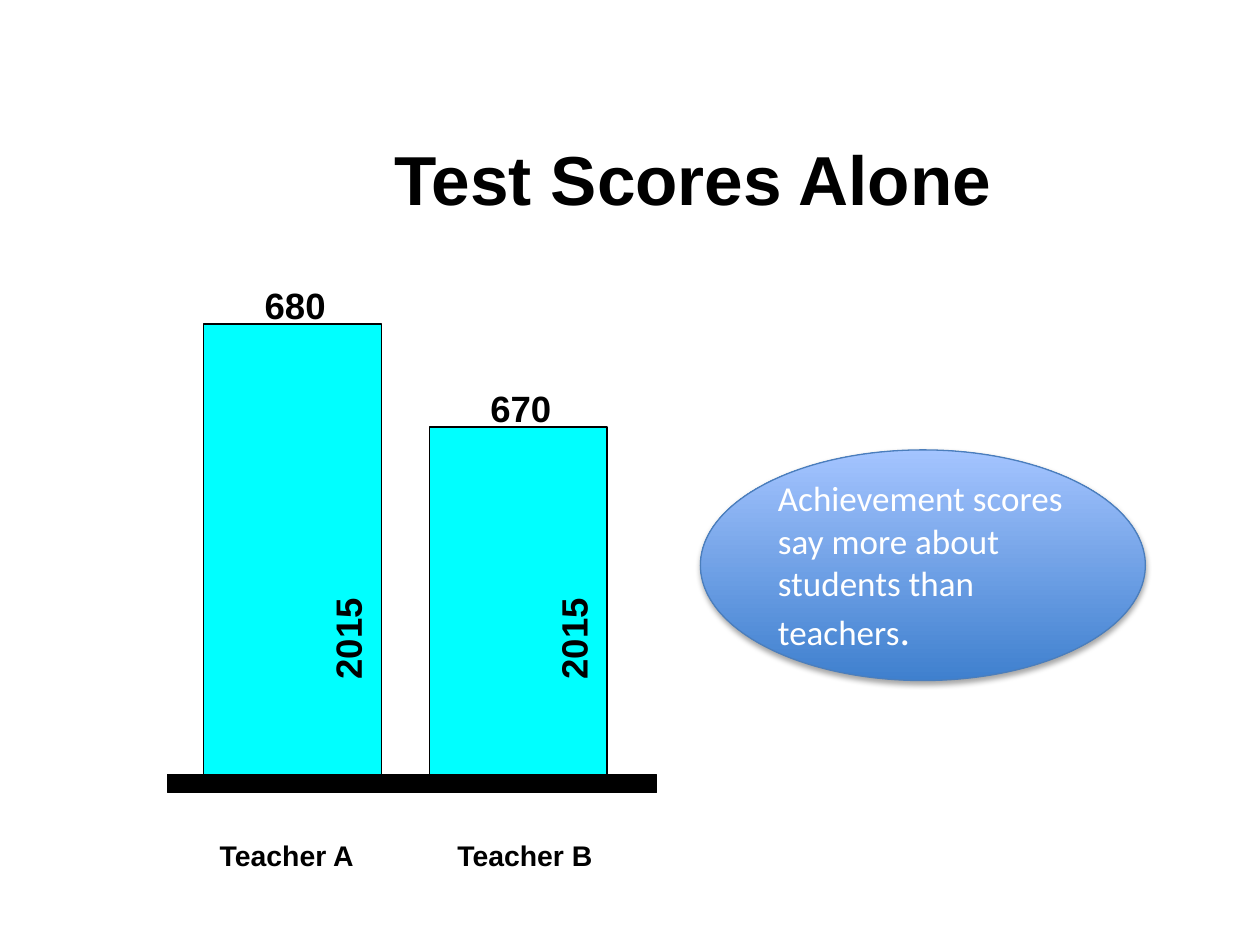
from lxml import etree
from pptx import Presentation
from pptx.dml.color import RGBColor
from pptx.enum.shapes import MSO_SHAPE
from pptx.enum.text import MSO_ANCHOR, MSO_AUTO_SIZE, PP_ALIGN
from pptx.oxml.ns import qn
from pptx.util import Cm, Pt

RECTANGLE, ELLIPSE = MSO_SHAPE.RECTANGLE, MSO_SHAPE.OVAL
CENTER, LEFT = PP_ALIGN.CENTER, PP_ALIGN.LEFT
MIDDLE = MSO_ANCHOR.MIDDLE
GROW = MSO_AUTO_SIZE.SHAPE_TO_FIT_TEXT
TITLE_ONLY = 5

COLORS = {
    "black": "000000",
    "bar": "00FFFF",
    "bubble_bottom": "3F80CE",
    "bubble_top": "A4C4FF",
    "bubble_line": "4B7EBC",
    "white": "FFFFFF",
}

# Teacher, score, bar left, bar top, bar height, name left (cm)
BARS = [
    ("Teacher A", "680", 4.11, 6.53, 9.17, 3.86),
    ("Teacher B", "670", 8.66, 8.61, 7.34, 8.66),
]
YEAR = "2015"
BAR_WIDTH = 3.58


def color(name):
    return RGBColor.from_string(COLORS[name])


def add_run(paragraph, text, size, font_name, color_name, bold=False):
    run = paragraph.add_run()
    run.text = text
    run.font.size = Pt(size)
    run.font.name = font_name
    run.font.bold = bold
    run.font.color.rgb = color(color_name)
    return run


def set_title(slide):
    title = slide.shapes.title
    title.left, title.top, title.width, title.height = Cm(2.54), Cm(2.74), Cm(22.86), Cm(1.68)
    title.text_frame.vertical_anchor = MIDDLE
    paragraph = title.text_frame.paragraphs[0]
    paragraph.alignment = CENTER
    add_run(paragraph, "Test Scores Alone", 39.6, "Arial", "black", bold=True)


def add_box(shapes, kind, left, top, width, height, line_name):
    shape = shapes.add_shape(kind, Cm(left), Cm(top), Cm(width), Cm(height))
    shape.shadow.inherit = False
    shape.line.color.rgb = color(line_name)
    shape.line.width = Pt(0.75)
    return shape


def add_rectangle(shapes, left, top, width, height, fill_name):
    shape = add_box(shapes, RECTANGLE, left, top, width, height, "black")
    shape.fill.solid()
    shape.fill.fore_color.rgb = color(fill_name)


def add_label(shapes, text, left, top, width, height, size, rotation=0):
    """Add a bold, centred label whose text is set as a subscript."""
    label = shapes.add_textbox(Cm(left), Cm(top), Cm(width), Cm(height))
    label.rotation = rotation
    label.text_frame.word_wrap = True
    label.text_frame.auto_size = GROW
    paragraph = label.text_frame.paragraphs[0]
    paragraph.alignment = CENTER
    run = add_run(paragraph, text, size, "Arial", "black", bold=True)
    run.font._element.set("baseline", "-25000")


def add_bar_graph(slide):
    shapes = slide.shapes.add_group_shape().shapes
    for teacher, score, left, top, height, name_left in BARS:
        add_rectangle(shapes, left, top, BAR_WIDTH, height, "bar")
        add_label(shapes, teacher, name_left, 16.1, 3.84, 1.07, 28)
        add_label(shapes, YEAR, left - 0.33, 12.24, 4.88, 1.27, 36, rotation=270)
        add_label(shapes, score, left + 0.76, top - 1.81, 2.16, 1.27, 36)
    add_rectangle(shapes, 3.38, 15.62, 9.86, 0.36, "black")


def add_soft_shadow(shape):
    effects = shape._element.spPr.find(qn("a:effectLst"))
    shadow = etree.SubElement(
        effects, qn("a:outerShdw"), blurRad=str(Pt(3.1)), dist=str(Pt(1.8)),
        dir="5400000", rotWithShape="0")
    shade = etree.SubElement(shadow, qn("a:srgbClr"), val=COLORS["black"])
    etree.SubElement(shade, qn("a:alpha"), val="35000")


def add_bubble(slide):
    bubble = add_box(slide.shapes, ELLIPSE, 14.12, 9.07, 8.97, 4.65, "bubble_line")
    bubble.fill.gradient()
    bubble.fill.gradient_angle = 90
    for stop, name in zip(bubble.fill.gradient_stops, ("bubble_bottom", "bubble_top")):
        stop.color.rgb = color(name)
    add_soft_shadow(bubble)
    bubble.text_frame.word_wrap = True
    bubble.text_frame.vertical_anchor = MIDDLE
    paragraph = bubble.text_frame.paragraphs[0]
    paragraph.alignment = LEFT
    add_run(paragraph, "Achievement scores say more about students than teachers",
            20, "Calibri", "white")
    add_run(paragraph, ".", 24, "Calibri", "white")


def main():
    presentation = Presentation()
    presentation.slide_width, presentation.slide_height = Cm(25.4), Cm(19.05)
    slide = presentation.slides.add_slide(presentation.slide_layouts[TITLE_ONLY])
    set_title(slide)
    add_bar_graph(slide)
    add_bubble(slide)
    presentation.save("out.pptx")


if __name__ == "__main__":
    main()
